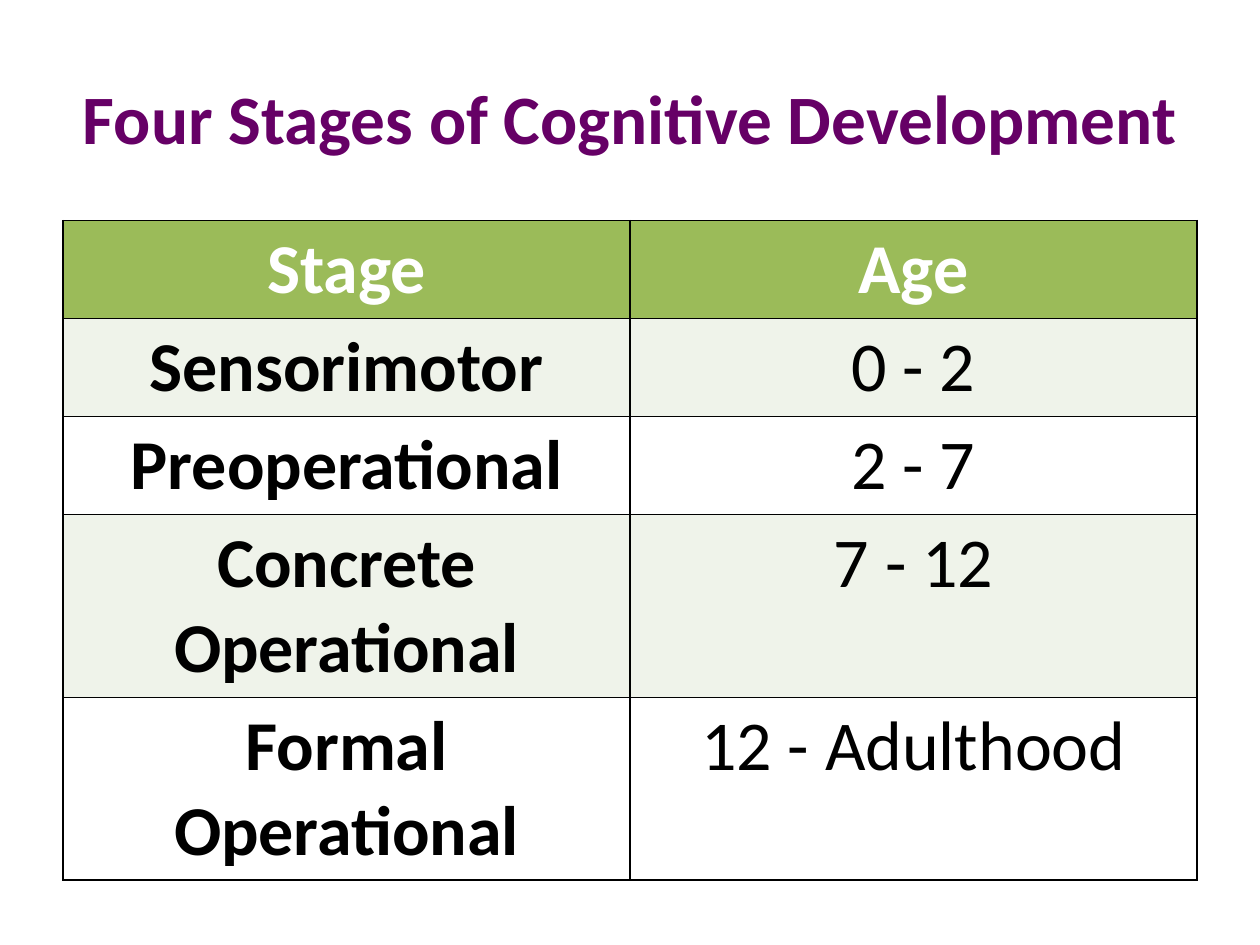
"""Build a slide with a table of the four stages of cognitive development."""
import pptx
import pptx.dml.color
import pptx.enum.text
import pptx.oxml
import pptx.oxml.ns
import pptx.util

Pt = pptx.util.Pt


def color(value):
    return pptx.dml.color.RGBColor.from_string(value)


def format_text(text_frame, size, bold, value):
    paragraph = text_frame.paragraphs[0]
    paragraph.alignment = pptx.enum.text.PP_ALIGN.CENTER
    font = paragraph.runs[0].font
    font.name = "Calibri"
    font.size = Pt(size)
    font.bold = bold
    font.color.rgb = color(value)


stages = [
    ("Stage", "Age"),
    ("Sensorimotor", "0 - 2"),
    ("Preoperational", "2 - 7"),
    ("Concrete Operational", "7 - 12"),
    ("Formal Operational", "12 - Adulthood"),
]
row_heights = [56, 56, 56, 104.5, 104.5]
row_fills = ["9BBB59", "EFF3EA", "FFFFFF", "EFF3EA", "FFFFFF"]

presentation = pptx.Presentation()
presentation.slide_width = Pt(720)
presentation.slide_height = Pt(540)
slide = presentation.slides.add_slide(presentation.slide_layouts[6])

title = slide.shapes.add_textbox(Pt(36), Pt(21.6), Pt(648), Pt(90))
title.text_frame.word_wrap = True
title.text_frame.vertical_anchor = pptx.enum.text.MSO_ANCHOR.MIDDLE
title.text_frame.text = "Four Stages of Cognitive Development"
format_text(title.text_frame, 39.6, True, "660066")

table = slide.shapes.add_table(
    len(stages), 2, Pt(36), Pt(126), Pt(648), Pt(sum(row_heights))
).table
for row_index, texts in enumerate(stages):
    table.rows[row_index].height = Pt(row_heights[row_index])
    is_header = row_index == 0
    for column_index, text in enumerate(texts):
        cell = table.cell(row_index, column_index)
        cell.text_frame.text = text
        format_text(
            cell.text_frame,
            40,
            is_header or column_index == 0,
            "FFFFFF" if is_header else "000000",
        )
        properties = cell._tc.get_or_add_tcPr()
        for side in ("lnL", "lnR", "lnT", "lnB"):
            properties.append(pptx.oxml.parse_xml(
                f'<a:{side} {pptx.oxml.ns.nsdecls("a")} w="{Pt(1)}"><a:solidFill>'
                f'<a:srgbClr val="000000"/></a:solidFill></a:{side}>'
            ))
        cell.fill.solid()
        cell.fill.fore_color.rgb = color(row_fills[row_index])

presentation.save("out.pptx")
